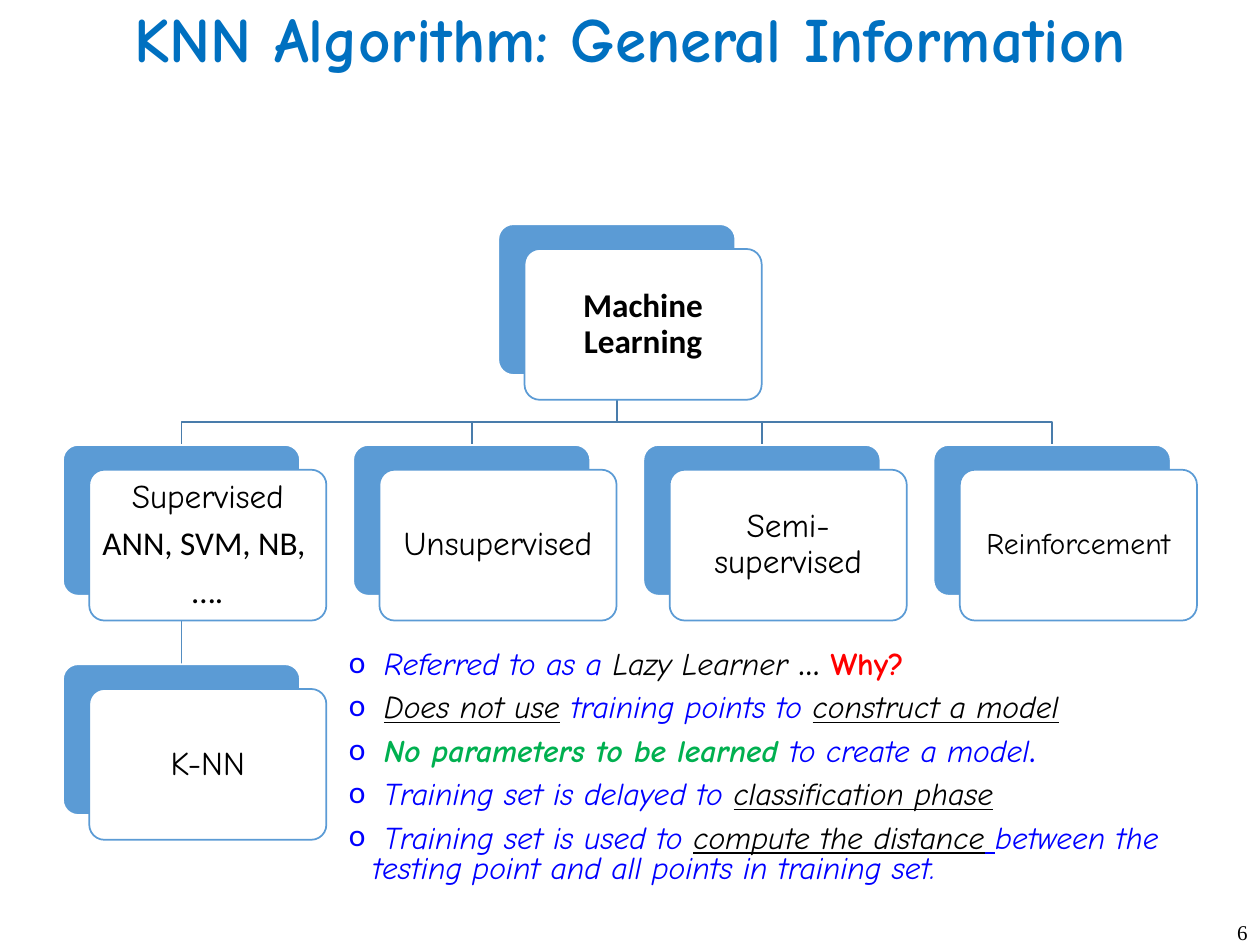
from lxml import etree
from pptx import Presentation
from pptx.dml.color import RGBColor
from pptx.enum import shapes, text
from pptx.oxml import ns
from pptx.util import Cm, Pt

BLUE, STEEL, WHITE, BLACK = "0000FF", "5B9BD5", "FFFFFF", "000000"
HAND, SANS = "Comic Neue", "Calibri"
WIDE, HIGH = 4.78, 3.04
LEFT, STEP = 1.27, 5.85
ROWS = (4.52, 8.97, 13.39)
BUS = 8.51

PLAIN = {"color": BLUE, "italic": True, "bold": False}
DARK = {**PLAIN, "color": BLACK}
LINED = {**DARK, "underline": True}
BOLD = {"color": BLUE, "bold": True}
GAP = (" ", BOLD)
NOTES = [
    [("Referred to as a ", PLAIN), ("Lazy Learner ", DARK),
     ("… ", {**BOLD, "color": BLACK}), ("Why?", {**BOLD, "color": "FF0000"})],
    [("Does not use", LINED), GAP, ("training points to ", PLAIN),
     ("construct a model", LINED)],
    [("No parameters to be learned ", {**BOLD, "color": "00B050", "italic": True}),
     ("to create a model", PLAIN), (".", BOLD)],
    [("Training set is delayed to ", PLAIN), ("classification phase", LINED)],
    [("Training set is used to ", PLAIN), ("compute the distance", LINED),
     (" ", {**PLAIN, "underline": True}),
     ("between the testing point and all points in training set.", PLAIN)],
]
CARDS = [
    (1.5, 0, [("Machine Learning", SANS)], 19, True),
    (0, 1, [("Supervised", HAND), ("ANN, SVM, NB, ", SANS), ("….", SANS)], 19, False),
    (0, 2, [("K-NN", HAND)], 19, False),
    (1, 1, [("Unsupervised", HAND)], 19, False),
    (2, 1, [("Semi-supervised", HAND)], 19, False),
    (3, 1, [("Reinforcement", HAND)], 17, False),
]


def tint(code):
    return RGBColor.from_string(code)


def apply(item, form):
    for key, val in form.items():
        setattr(item, key, val)


def write(para, words, color, **form):
    run = para.add_run()
    run.text = words
    apply(run.font, form)
    run.font.color.rgb = tint(color)


def edge(line, color):
    line.color.rgb = tint(color)
    line.width = Pt(1)


def place(shape, left, top, width, height):
    apply(shape, {"left": Cm(left), "top": Cm(top),
                  "width": Cm(width), "height": Cm(height)})


def branch(slide, col):
    root, end = (LEFT + n * STEP + WIDE / 2 for n in (1.5, col))
    path = slide.shapes.build_freeform(Cm(root), Cm(ROWS[0] + HIGH))
    path.add_line_segments([(Cm(root), Cm(BUS)), (Cm(end), Cm(BUS)),
                            (Cm(end), Cm(ROWS[1]))], close=False)
    shape = path.convert_to_shape()
    shape.shadow.inherit = False
    shape.fill.background()
    edge(shape.line, "497CAB")


def panel(slide, left, top, fill, line):
    shape = slide.shapes.add_shape(shapes.MSO_SHAPE.ROUNDED_RECTANGLE,
                                   Cm(left), Cm(top), Cm(WIDE), Cm(HIGH))
    shape.adjustments[0] = 0.1
    shape.shadow.inherit = False
    shape.fill.solid()
    shape.fill.fore_color.rgb = tint(fill)
    edge(shape.line, line)
    return shape


def card(slide, col, row, lines, size, bold):
    left, top = LEFT + col * STEP, ROWS[row]
    back = panel(slide, left, top, STEEL, WHITE)
    front = panel(slide, left + 0.53, top + 0.5, WHITE, STEEL)
    frame = front.text_frame
    pad = Cm(0.16)
    apply(frame, {"word_wrap": True, "vertical_anchor": text.MSO_ANCHOR.MIDDLE,
                  "margin_left": pad, "margin_right": pad,
                  "margin_top": pad, "margin_bottom": pad})
    for n, (words, font) in enumerate(lines):
        para = frame.add_paragraph() if n else frame.paragraphs[0]
        apply(para, {"alignment": text.PP_ALIGN.CENTER, "line_spacing": 0.9,
                     "space_after": Pt(size * 0.35)})
        write(para, words, BLACK, name=font, size=Pt(size), bold=bold)
    return back


def join(slide, top, low):
    link = slide.shapes.add_connector(shapes.MSO_CONNECTOR.STRAIGHT, 0, 0, 0, 0)
    link.begin_connect(top, 2)
    link.end_connect(low, 0)
    edge(link.line, "538DC1")
    etree.SubElement(link._element.spPr, ns.qn("a:effectLst"))
    slide.shapes._spTree.insert(2, link._element)


def title(shape):
    place(shape, 0, 0, 25.4, 1.7)
    frame = shape.text_frame
    apply(frame, {"vertical_anchor": text.MSO_ANCHOR.MIDDLE,
                  "auto_size": text.MSO_AUTO_SIZE.NONE})
    para = frame.paragraphs[0]
    apply(para, {"alignment": text.PP_ALIGN.CENTER, "line_spacing": 0.9})
    write(para, "KNN Algorithm: General Information", "0070C0",
          name=HAND, size=Pt(36), bold=True)


def bullet(para):
    prop = para._p.get_or_add_pPr()
    for key, val in {"marL": Cm(0.48), "indent": Cm(-0.48)}.items():
        prop.set(key, str(int(val)))
    shade = etree.SubElement(prop, ns.qn("a:buClr"))
    etree.SubElement(shade, ns.qn("a:srgbClr"), val=BLUE)
    etree.SubElement(prop, ns.qn("a:buFont"), typeface=SANS)
    etree.SubElement(prop, ns.qn("a:buChar"), char="o")


def notes(shape):
    place(shape, 6.78, 13, 18.24, 5.21)
    frame = shape.text_frame
    frame.auto_size = text.MSO_AUTO_SIZE.NONE
    for n, runs in enumerate(NOTES):
        para = frame.add_paragraph() if n else frame.paragraphs[0]
        apply(para, {"line_spacing": 0.8, "space_before": Pt(7.5),
                     "alignment": text.PP_ALIGN.LEFT})
        bullet(para)
        for words, form in [GAP] + runs:
            write(para, words, name=HAND, size=Pt(18), **form)


def number(slide):
    box = slide.shapes.add_textbox(Cm(20.12), Cm(18.42), Cm(5.28), Cm(0.63))
    box.text_frame.word_wrap = True
    para = box.text_frame.paragraphs[0]
    para.alignment = text.PP_ALIGN.RIGHT
    write(para, "6", BLACK, name="Times New Roman", size=Pt(12))


def main():
    deck = Presentation()
    apply(deck, {"slide_width": Cm(25.4), "slide_height": Cm(19.05)})
    slide = deck.slides.add_slide(deck.slide_layouts[1])
    for col in range(4):
        branch(slide, col)
    backs = {(col, row): card(slide, col, row, *rest) for col, row, *rest in CARDS}
    join(slide, backs[0, 1], backs[0, 2])
    title(slide.shapes.title)
    notes(slide.placeholders[1])
    number(slide)
    deck.save("out.pptx")


if __name__ == "__main__":
    main()
